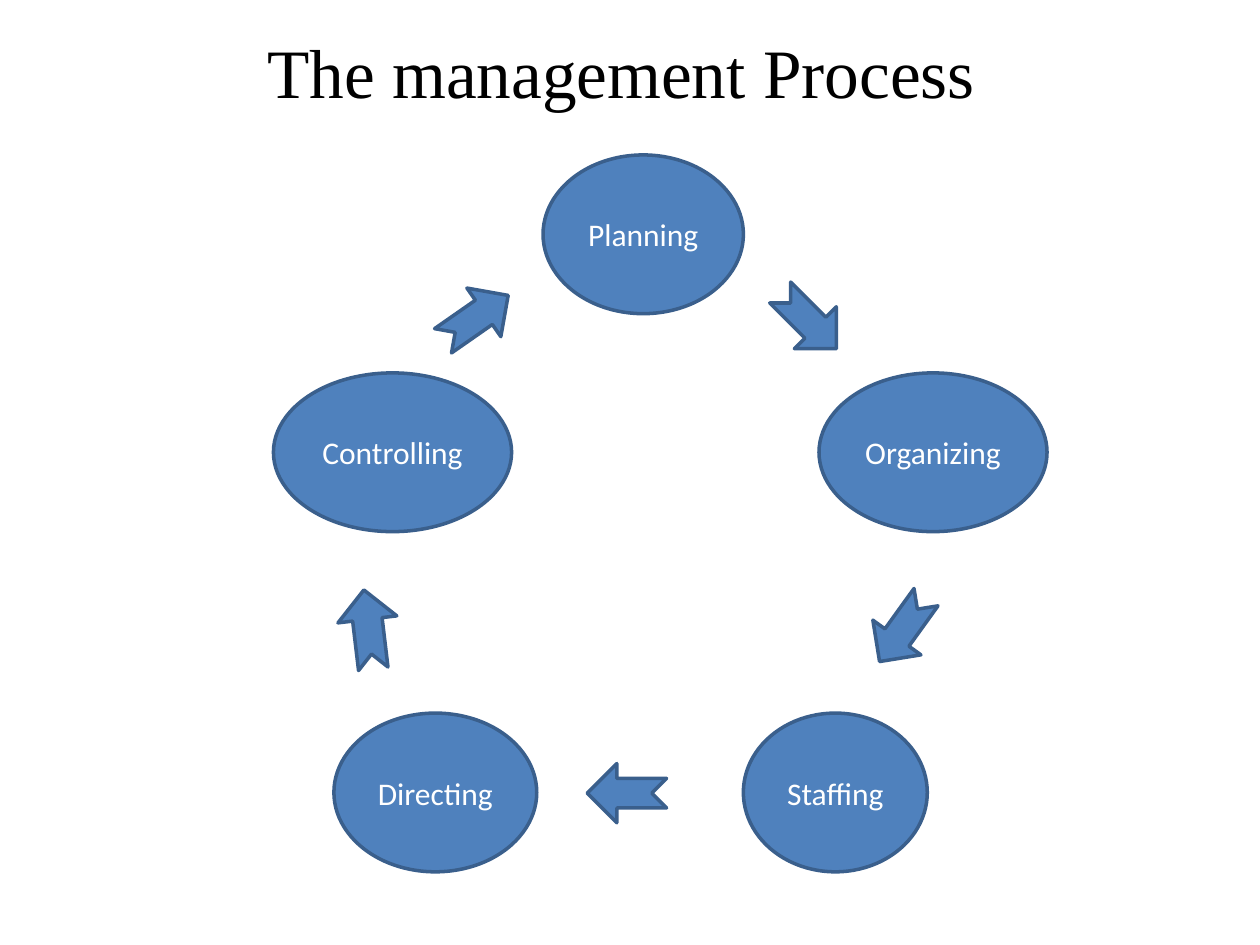
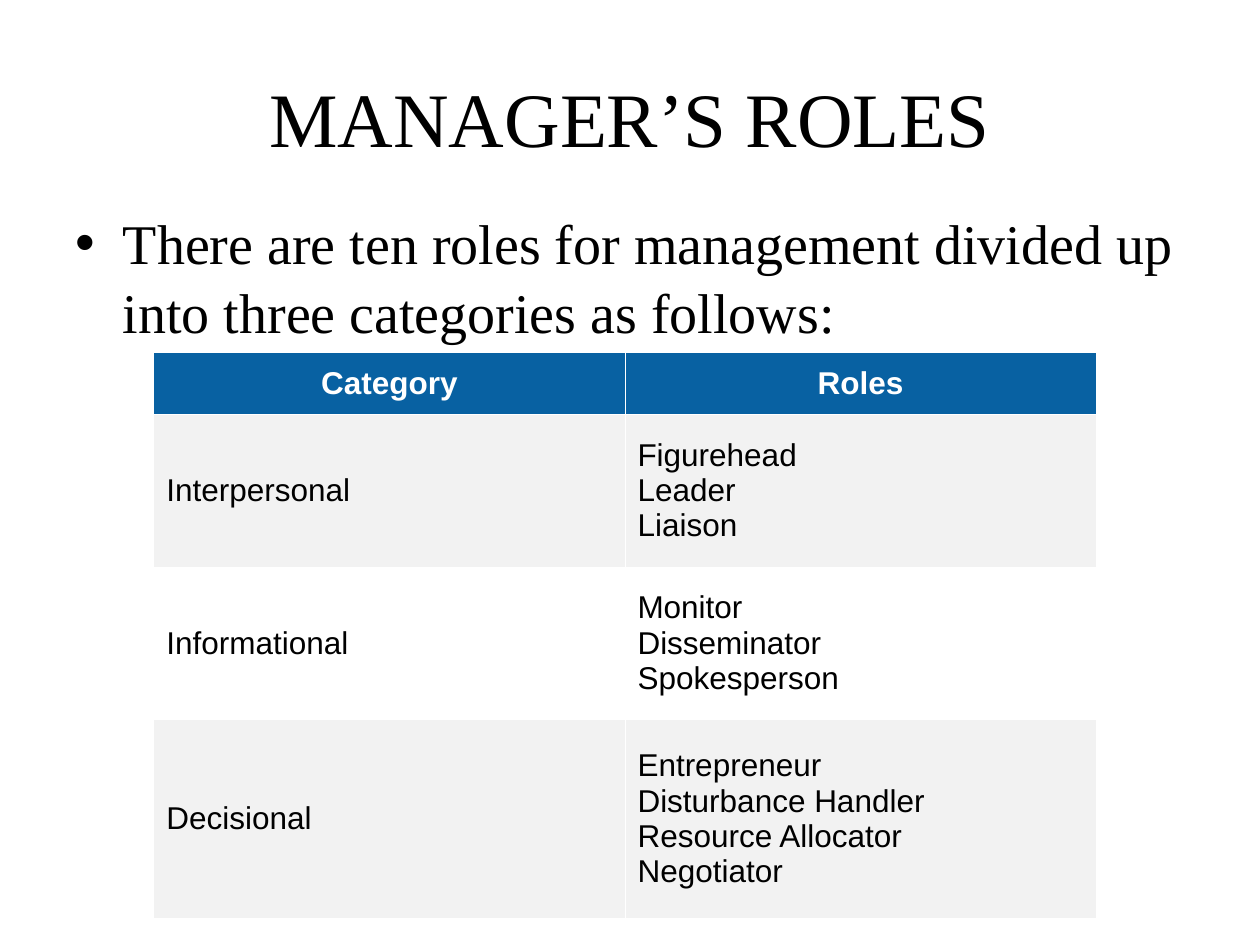
from lxml import etree
from pptx import Presentation
from pptx.dml.color import RGBColor
from pptx.enum import shapes, text
from pptx.oxml import ns
from pptx.util import Inches, Pt

BLACK = RGBColor(0, 0, 0)
WHITE = RGBColor(255, 255, 255)
BLUE = RGBColor(0x4F, 0x81, 0xBD)
EDGE = RGBColor(0x3A, 0x5F, 0x8C)
HEAD = RGBColor(0x08, 0x61, 0xA2)
GREY = RGBColor(0xF2, 0xF2, 0xF2)
SERIF, SANS, LABEL = "Times New Roman", "Arial", "Calibri"

STEP_H = 1.26
# name, left, top, width
STEPS = [
    ("Planning ", 4.31, 1.23, 1.59),
    ("Organizing ", 6.5, 2.96, 1.81),
    ("Staffing", 5.9, 5.66, 1.46),
    ("Directing ", 2.65, 5.66, 1.61),
    ("Controlling ", 2.17, 2.96, 1.89),
]
ARROW_W, ARROW_H = 0.63, 0.47
# left, top, rotation
ARROWS = [
    (6.1, 2.31, 45),
    (6.85, 4.76, 125.8),
    (4.66, 6.06, 180),
    (2.61, 4.76, 263.2),
    (3.46, 2.29, 325.1),
]
ROLES = [
    ("Category", ["Roles"]),
    ("Interpersonal", ["Figurehead", "Leader", "Liaison"]),
    ("Informational", ["Monitor", "Disseminator", "Spokesperson"]),
    ("Decisional", ["Entrepreneur", "Disturbance Handler",
                    "Resource Allocator", "Negotiator"]),
]
ROW_HEIGHTS = [0.49, 1.21, 1.21, 1.58]
COL_W = 3.74


def place(shape, left, top, width, height):
    shape.left, shape.top = Inches(left), Inches(top)
    shape.width, shape.height = Inches(width), Inches(height)


def write(frame, words, font, size, color, align, bold=False):
    """Set the text of a frame and format its runs."""
    frame.text = words
    for para in frame.paragraphs:
        para.alignment = align
        for run in para.runs:
            run.font.name, run.font.size = font, Pt(size)
            run.font.bold, run.font.color.rgb = bold, color


def add_title(slide, words, height, size):
    title = slide.shapes.title
    place(title, 0.5, 0.3, 9, height)
    frame = title.text_frame
    write(frame, words, SERIF, size, BLACK, text.PP_ALIGN.CENTER)
    frame.auto_size = text.MSO_AUTO_SIZE.NONE
    frame.vertical_anchor = text.MSO_ANCHOR.MIDDLE


def add_body(slide, words):
    body = slide.placeholders[1]
    place(body, 0.5, 1.58, 9, 5.12)
    frame = body.text_frame
    write(frame, words, SERIF, 32, BLACK, text.PP_ALIGN.LEFT)
    frame.auto_size = text.MSO_AUTO_SIZE.NONE
    para = frame.paragraphs[0]
    para.space_before = Pt(0)
    para.line_spacing = 1.04


def add_blue(slide, kind, left, top, width, height):
    """Add a preset shape in the diagram's fill and line."""
    shape = slide.shapes.add_shape(
        kind, Inches(left), Inches(top), Inches(width), Inches(height))
    shape.shadow.inherit = False
    shape.fill.solid()
    shape.fill.fore_color.rgb = BLUE
    shape.line.color.rgb = EDGE
    shape.line.width = Pt(2)
    return shape


def add_step(slide, name, left, top, width):
    oval = add_blue(slide, shapes.MSO_SHAPE.OVAL, left, top, width, STEP_H)
    frame = oval.text_frame
    write(frame, name, LABEL, 18, WHITE, text.PP_ALIGN.CENTER)
    frame.vertical_anchor = text.MSO_ANCHOR.MIDDLE


def add_arrow(slide, left, top, turn):
    arrow = add_blue(slide, shapes.MSO_SHAPE.NOTCHED_RIGHT_ARROW,
                     left, top, ARROW_W, ARROW_H)
    arrow.rotation = turn


def add_borders(cell):
    props = cell._tc.get_or_add_tcPr()
    for spot, side in enumerate(("lnL", "lnR", "lnT", "lnB")):
        line = etree.Element(ns.qn("a:" + side), w=str(Pt(0.5)))
        fill = etree.SubElement(line, ns.qn("a:solidFill"))
        etree.SubElement(fill, ns.qn("a:srgbClr"), val=str(WHITE))
        props.insert(spot, line)


def fill_cell(cell, words, row):
    head = row == 0
    cell.fill.solid()
    cell.fill.fore_color.rgb = HEAD if head else GREY if row % 2 else WHITE
    align = text.PP_ALIGN.CENTER if head else text.PP_ALIGN.LEFT
    write(cell.text_frame, words, SANS, 18, WHITE if head else BLACK,
          align, head)
    cell.vertical_anchor = text.MSO_ANCHOR.MIDDLE
    add_borders(cell)


def add_roles(slide):
    table = slide.shapes.add_table(
        len(ROLES), 2, Inches(1.22), Inches(2.8),
        Inches(2 * COL_W), Inches(sum(ROW_HEIGHTS))).table
    for col in table.columns:
        col.width = Inches(COL_W)
    for row, (group, names) in enumerate(ROLES):
        table.rows[row].height = Inches(ROW_HEIGHTS[row])
        fill_cell(table.cell(row, 0), group, row)
        fill_cell(table.cell(row, 1), "\v".join(names), row)


def main():
    deck = Presentation()
    deck.slide_width, deck.slide_height = Inches(10), Inches(7.5)

    cycle = deck.slides.add_slide(deck.slide_layouts[5])
    add_title(cycle, "The management Process ", 0.52, 39.6)
    for step in STEPS:
        add_step(cycle, *step)
    for arrow in ARROWS:
        add_arrow(cycle, *arrow)

    roles = deck.slides.add_slide(deck.slide_layouts[1])
    add_title(roles, "MANAGER’S ROLES", 1.25, 44)
    add_body(roles, "There are ten roles for management divided up "
                    "into three categories as follows:")
    add_roles(roles)

    deck.save("out.pptx")


if __name__ == "__main__":
    main()
